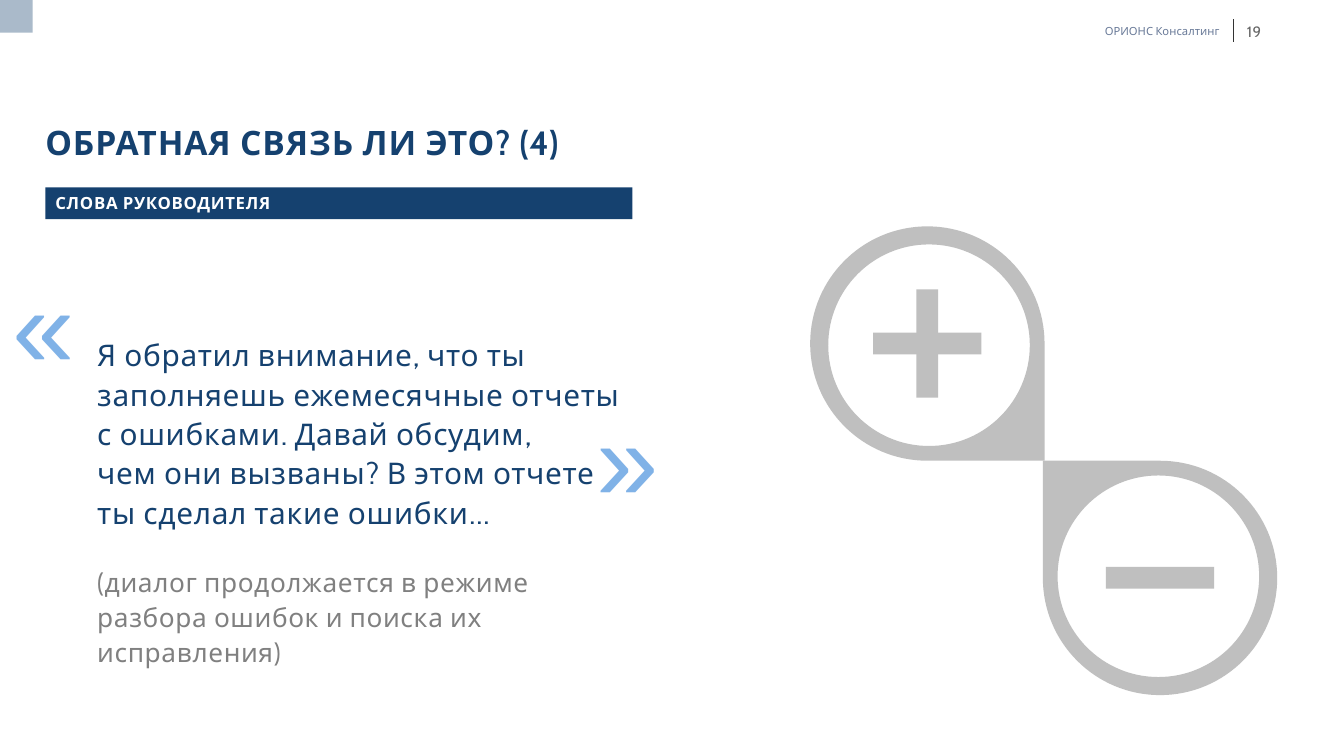
from lxml.etree import SubElement
from pptx import Presentation
from pptx.dml.color import RGBColor
from pptx.enum.shapes import MSO_CONNECTOR as Connector, MSO_SHAPE as Preset
from pptx.enum.text import MSO_ANCHOR as Anchor, MSO_AUTO_SIZE as AutoSize, PP_ALIGN as Align
from pptx.oxml.ns import qn
from pptx.util import Inches, Pt

COLORS = {
    "navy": "15416F",
    "sky": "80B2E7",
    "corner": "AABACA",
    "company": "697A98",
    "number": "666666",
    "rule": "333333",
    "sign": "BFBFBF",
    "aside": "808080",
    "white": "FFFFFF",
}
WIDTH, HEIGHT = Inches(13.333), Inches(7.5)
COLUMNS = 16
CELL = WIDTH / COLUMNS  # square grid cells, 16 columns by 9 rows
KAPPA = 0.5523  # handle length of a quarter circle
NBSP = chr(160)


def grid(*lengths):
    return [round(length * CELL) for length in lengths]


def quarter_arcs(center, radius):
    """Bezier points of a circle, clockwise from the bottom, one quarter each."""
    axes = [(0, 1), (-1, 0), (0, -1), (1, 0), (0, 1)]
    for (ax, ay), (bx, by) in zip(axes, axes[1:]):
        steps = [(ax + KAPPA * bx, ay + KAPPA * by), (bx + KAPPA * ax, by + KAPPA * ay), (bx, by)]
        yield [(center + radius * x, center + radius * y) for x, y in steps]


class SlideBuilder:
    """Holds the slide and its style; all lengths are in grid cells."""

    def __init__(self, slide, font="Cabin"):
        self.shapes = slide.shapes
        self.font = font

    def color(self, name):
        return RGBColor.from_string(COLORS[name])

    def paint(self, shape, color):
        shape.shadow.inherit = False
        shape.fill.solid()
        shape.fill.fore_color.rgb = self.color(color)
        shape.line.fill.background()
        return shape

    def block(self, left, top, width, height, color, shapes=None):
        shapes = shapes or self.shapes
        shape = shapes.add_shape(Preset.RECTANGLE, *grid(left, top, width, height))
        return self.paint(shape, color)

    def rule(self, x, top, bottom, color):
        line = self.shapes.add_connector(Connector.STRAIGHT, *grid(x, top, x, bottom))
        line.line.color.rgb = self.color(color)
        line.line.width = Pt(0.5)
        SubElement(line._element.spPr, qn("a:effectLst"))

    def style(self, paragraph, size, color, spacing=0, bold=False, font=None, align=Align.LEFT):
        paragraph.alignment = align
        for run in paragraph.runs:
            run.font.name = font or self.font
            run.font.size = Pt(size)
            run.font.bold = bold
            run.font.color.rgb = self.color(color)
            run._r.get_or_add_rPr().set("spc", str(round(spacing * 100)))

    def text(self, left, top, width, height, text, inset=True, anchor=Anchor.TOP, grow=True):
        frame = self.shapes.add_textbox(*grid(left, top, width, height)).text_frame
        frame.word_wrap = True
        frame.auto_size = AutoSize.SHAPE_TO_FIT_TEXT if grow else AutoSize.NONE
        frame.vertical_anchor = anchor
        if not inset:
            frame.margin_left = frame.margin_right = frame.margin_top = frame.margin_bottom = 0
        frame.text = text
        return frame.paragraphs

    def drop(self, shapes, x, y, rotation=0, radius=1.395, hole=1.2, shift=0.02):
        """Ring with a square lower right corner, turned by the rotation."""
        left, top, right, bottom = grid(x - radius, y - radius, x + radius, y + radius)
        frame = shapes.build_freeform(left, top, scale=1.0)
        frame.add_line_segments([(right, top), (right, bottom), (left, bottom)], close=True)
        shape = self.paint(frame.convert_to_shape(), "sign")
        shape.rotation = rotation
        outline = shape._element.spPr.find(".//" + qn("a:path"))
        for child in list(outline):
            outline.remove(child)

        def add(command, *points):
            step = SubElement(outline, qn("a:" + command))
            for point in points:
                px, py = grid(*point)
                SubElement(step, qn("a:pt"), x=str(px), y=str(py))

        # Outer edge: three quarters of a circle and the corner
        add("moveTo", (2 * radius, radius))
        add("lnTo", (2 * radius, 2 * radius))
        add("lnTo", (radius, 2 * radius))
        for points in list(quarter_arcs(radius, radius))[:3]:
            add("cubicBezTo", *points)
        add("close")
        # Round opening
        center = radius + shift
        add("moveTo", (center, center + hole))
        for points in quarter_arcs(center, hole):
            add("cubicBezTo", *points)
        add("close")

    def bar(self, shapes, x, y, width, height):
        self.block(x - width / 2, y - height / 2, width, height, "sign", shapes)


def main():
    presentation = Presentation()
    presentation.slide_width, presentation.slide_height = WIDTH, HEIGHT
    slide = presentation.slides.add_slide(presentation.slide_layouts[6])
    builder = SlideBuilder(slide)

    # Page header
    builder.rule(14.68, 0.23, 0.5, "rule")
    company = builder.text(12.88, 0.29, 1.64, 0.16, "ОРИОНС Консалтинг", False, Anchor.MIDDLE)
    builder.style(company[0], 8, "company", align=Align.RIGHT)
    builder.block(0, 0, 0.39, 0.39, "corner")
    number = builder.text(14.68, 0.29, 0.5, 0.16, "19", False, Anchor.MIDDLE, grow=False)
    builder.style(number[0], 10.7, "number", 0.4, align=Align.CENTER)

    # Title and subtitle band
    title = builder.text(0.54, 1.45, 7, 0.48, "ОБРАТНАЯ СВЯЗЬ ЛИ ЭТО? (4)", False, Anchor.BOTTOM)
    builder.style(title[0], 24, "navy", 0.65, bold=True)
    band = builder.block(0.54, 2.23, 6.99, 0.38, "navy").text_frame
    band.text = "СЛОВА РУКОВОДИТЕЛЯ"
    band.vertical_anchor = Anchor.MIDDLE
    builder.style(band.paragraphs[0], 12, "white", 0.5, bold=True)

    # Plus and minus signs
    length, thickness = 1.29, 0.26
    plus, minus = (11.04, 4.09), (13.81, 6.88)
    signs = slide.shapes.add_group_shape().shapes
    builder.drop(signs, *plus)
    builder.bar(signs, *plus, thickness, length)
    builder.bar(signs, *plus, length, thickness)
    builder.drop(signs, *minus, rotation=180)
    builder.bar(signs, *minus, length, thickness)

    # Manager's words
    quote, aside = builder.text(
        1.04, 3.91, 6.64, 3.72,
        f"Я обратил внимание, что ты заполняешь ежемесячные отчеты с{NBSP}ошибками. "
        f"Давай обсудим, чем{NBSP}они вызваны? В этом отчете ты{NBSP}сделал такие ошибки…\n"
        "(диалог продолжается в режиме разбора ошибок и поиска их исправления)")
    builder.style(quote, 21.3, "navy", 0.55)
    builder.style(aside, 18.7, "aside", 0.45)
    for paragraph, space in ((quote, 24), (aside, 8)):
        paragraph.line_spacing = 1.1
        paragraph.space_after = Pt(space)

    # Quotation marks
    for mark, left, top in (("«", 0.03, 2.98), ("»", 6.98, 4.57)):
        paragraphs = builder.text(left, top, 1.09, 1.74, mark)
        builder.style(paragraphs[0], 80, "sky", 0.4, font="Arial")

    presentation.save("out.pptx")


if __name__ == "__main__":
    main()
